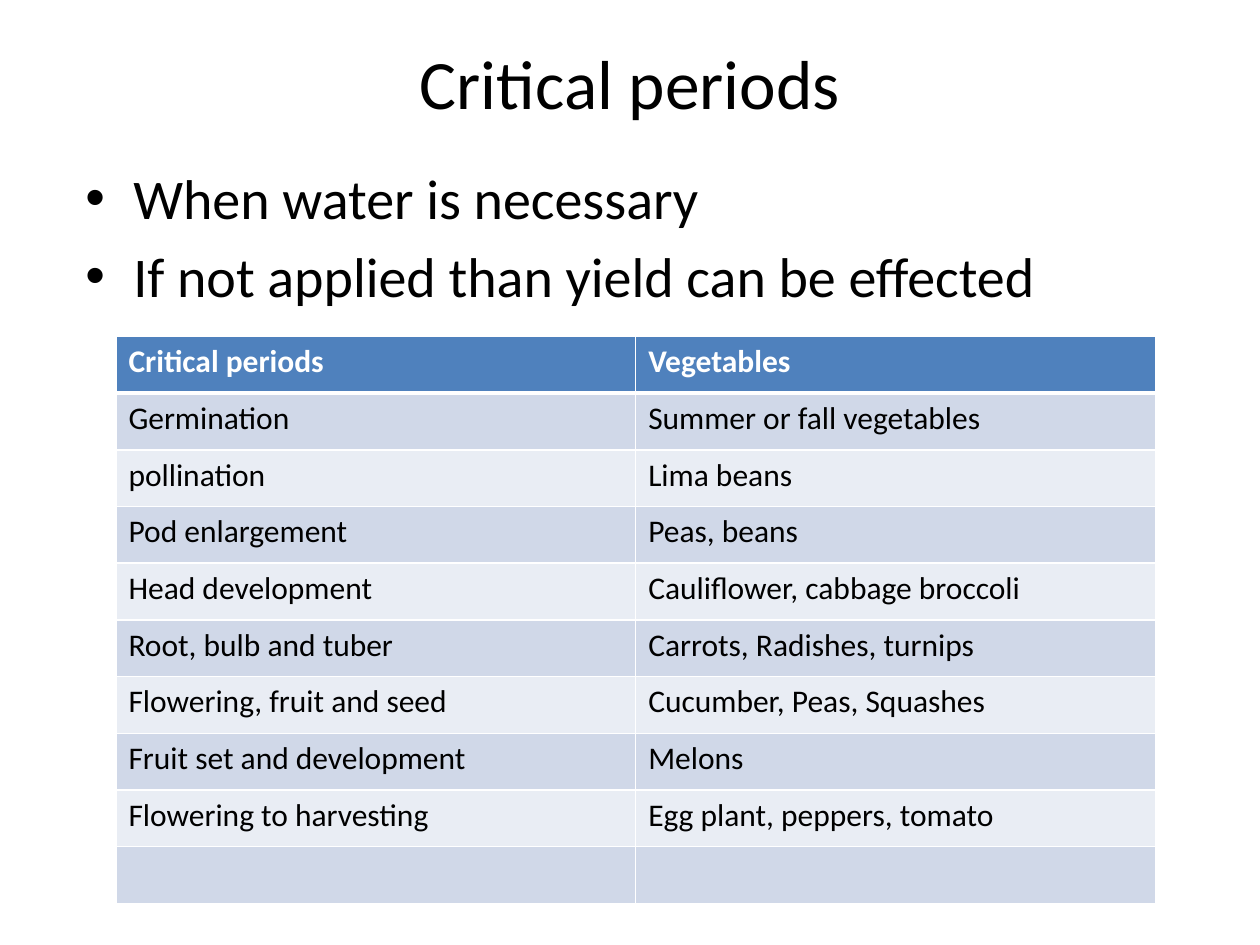
from lxml.etree import SubElement as Sub
from pptx import Presentation
from pptx.dml.color import RGBColor
from pptx.enum.text import MSO_ANCHOR as Anchor, PP_ALIGN as Align
from pptx.oxml.ns import qn
from pptx.util import Inches, Pt

BLACK, WHITE, BLUE = "000000", "FFFFFF", "4F81BD"
BANDS = ["D0D8E8", "E9EDF4"]

POINTS = [
    "When water is necessary",
    "If not applied than yield can be effected",
]
ROWS = [
    ("Critical periods", "Vegetables"),
    ("Germination", "Summer or fall vegetables"),
    ("pollination", "Lima beans"),
    ("Pod enlargement", "Peas, beans"),
    ("Head development", "Cauliflower, cabbage broccoli"),
    ("Root, bulb and tuber", "Carrots, Radishes, turnips"),
    ("Flowering, fruit and seed", "Cucumber, Peas, Squashes"),
    ("Fruit set and development", "Melons"),
    ("Flowering to harvesting", "Egg plant, peppers, tomato"),
    ("", ""),
]


def color(code):
    return RGBColor.from_string(code)


class Deck:
    font = "Calibri"

    def __init__(self, width, height):
        self.prs = Presentation()
        self.prs.slide_width, self.prs.slide_height = Inches(width), Inches(height)
        self.slide = self.prs.slides.add_slide(self.prs.slide_layouts[5])

    def label(self, para, text, size, ink=BLACK, bold=False):
        run = para.add_run()
        run.text = text
        run.font.name, run.font.size, run.font.bold = self.font, Pt(size), bold
        run.font.color.rgb = color(ink)

    def title(self, text, left, top, width, height):
        shape = self.slide.shapes.title
        shape.left, shape.top = Inches(left), Inches(top)
        shape.width, shape.height = Inches(width), Inches(height)
        shape.text_frame.vertical_anchor = Anchor.MIDDLE
        para = shape.text_frame.paragraphs[0]
        para.alignment = Align.CENTER
        self.label(para, text, 39.6)

    def bullets(self, items, *box):
        frame = self.slide.shapes.add_textbox(*map(Inches, box)).text_frame
        frame.word_wrap = True
        for i, item in enumerate(items):
            para = frame.add_paragraph() if i else frame.paragraphs[0]
            props = para._p.get_or_add_pPr()
            indent = Inches(0.38)
            props.set("marL", str(indent))
            props.set("indent", str(-indent))
            Sub(props, qn("a:buFont"), typeface="Arial")
            Sub(props, qn("a:buChar"), char="•")
            if i:
                para.space_before = Pt(6)
            self.label(para, item, 32)

    def border(self, cell, side, width):
        line = Sub(cell._tc.get_or_add_tcPr(), qn(f"a:ln{side}"), w=str(Pt(width)))
        fill = Sub(line, qn("a:solidFill"))
        Sub(fill, qn("a:srgbClr"), val=WHITE)

    def table(self, rows, left, top, width, height):
        grid = self.slide.shapes.add_table(
            len(rows), len(rows[0]), *map(Inches, (left, top, width, height))).table
        for r, row in enumerate(rows):
            head = r == 0
            for c, text in enumerate(row):
                cell = grid.cell(r, c)
                # Borders come before the fill; the header has a thick rule below
                for side in "LRTB":
                    thick = (head and side == "B") or (r == 1 and side == "T")
                    self.border(cell, side, 3 if thick else 1)
                cell.fill.solid()
                cell.fill.fore_color.rgb = color(BLUE if head else BANDS[(r - 1) % 2])
                if text:
                    self.label(cell.text_frame.paragraphs[0], text, 18,
                               WHITE if head else BLACK, head)


def main():
    deck = Deck(10, 7.5)
    # Heading and key points
    deck.title("Critical periods", 0.5, 0.3, 9, 0.7)
    deck.bullets(POINTS, 0.58, 1.25, 9, 4.95)
    # Crops by critical period
    deck.table(ROWS, 0.92, 2.67, 8.25, 4.5)
    deck.prs.save("out.pptx")


if __name__ == "__main__":
    main()
